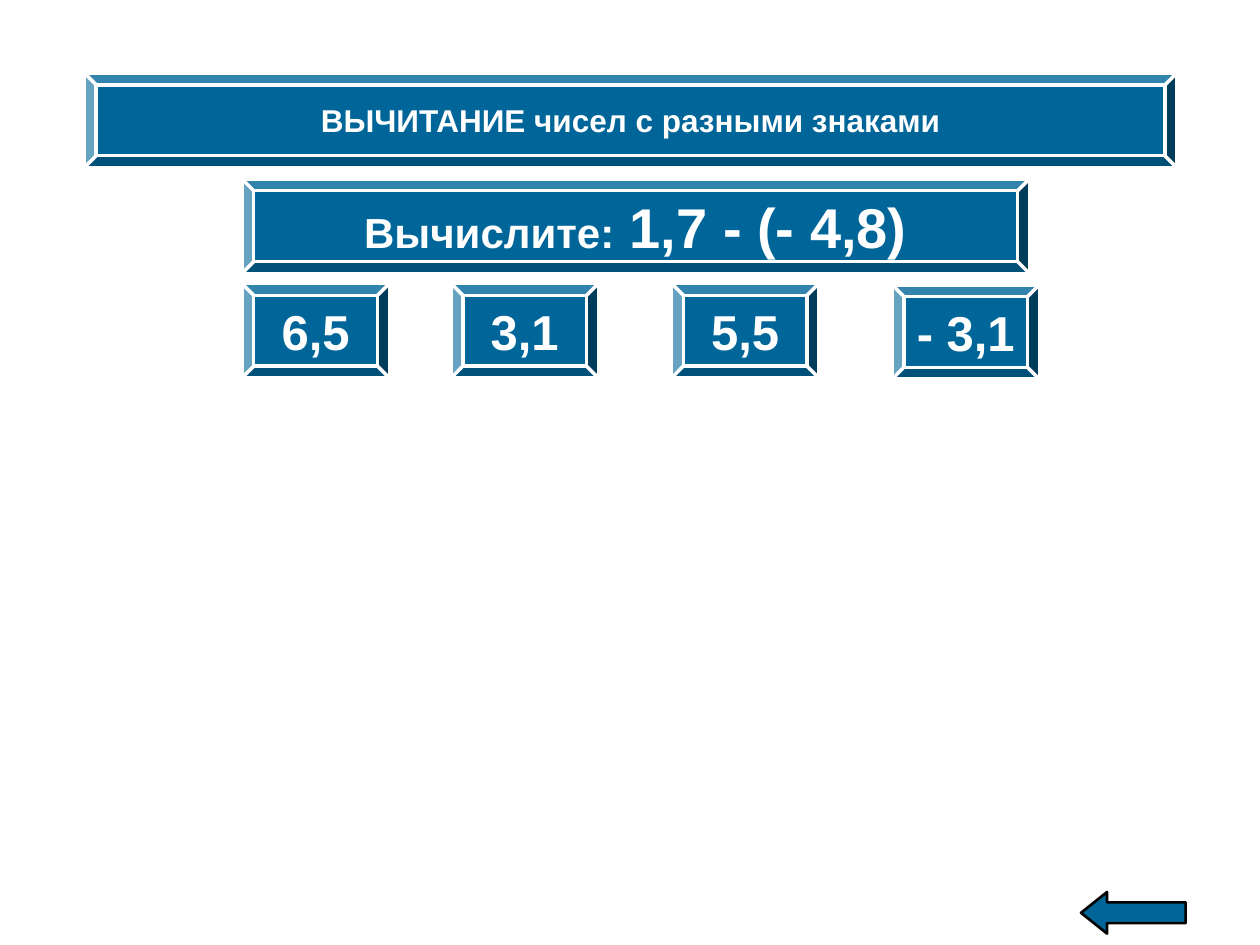
from dataclasses import dataclass

from pptx import Presentation
from pptx.dml.color import RGBColor
from pptx.enum.shapes import MSO_SHAPE as Shape
from pptx.enum.text import MSO_ANCHOR as Anchor, PP_ALIGN as Align
from pptx.util import Inches, Pt


@dataclass(frozen=True)
class Theme:
    fill: RGBColor = RGBColor(0x00, 0x66, 0x99)
    light: RGBColor = RGBColor(0xFF, 0xFF, 0xFF)
    outline: RGBColor = RGBColor(0x00, 0x00, 0x00)
    font: str = "Arial"
    title: int = 18
    prompt: int = 24
    answer: int = 28
    expression: int = 32
    bevel_line: float = 2
    arrow_line: float = 1.5


THEME = Theme()


def add_block(slide, kind, box, line_color, line_width):
    block = slide.shapes.add_shape(kind, *map(Inches, box))
    block.shadow.inherit = False
    block.fill.solid()
    block.fill.fore_color.rgb = THEME.fill
    block.line.color.rgb = line_color
    block.line.width = Pt(line_width)
    return block


def add_plate(slide, box, *parts):
    plate = add_block(slide, Shape.BEVEL, box, THEME.light, THEME.bevel_line)
    plate.adjustments[0] = 0.125
    frame = plate.text_frame
    frame.word_wrap = False
    frame.vertical_anchor = Anchor.MIDDLE
    paragraph = frame.paragraphs[0]
    paragraph.alignment = Align.CENTER
    for wording, size in parts:
        run = paragraph.add_run()
        run.text = wording
        run.font.name = THEME.font
        run.font.size = Pt(size)
        run.font.bold = True
        run.font.color.rgb = THEME.light


def add_answers(slide, box, answers):
    left, top, width, height = box
    for answer, offset, drop in answers:
        add_plate(slide, (left + offset, top + drop, width, height),
                  (answer, THEME.answer))


def add_back_arrow(slide, box):
    arrow = add_block(slide, Shape.LEFT_ARROW, box, THEME.outline, THEME.arrow_line)
    arrow.adjustments[0] = 0.5
    arrow.adjustments[1] = 0.625


def main():
    deck = Presentation()
    deck.slide_width, deck.slide_height = Inches(10), Inches(7.5)
    slide = deck.slides.add_slide(deck.slide_layouts[6])

    add_back_arrow(slide, (8.58, 7.08, 0.83, 0.33))
    add_plate(slide, (0.67, 0.58, 8.67, 0.75),
              ("ВЫЧИТАНИЕ чисел с разными знаками", THEME.title))
    add_plate(slide, (1.92, 1.42, 6.25, 0.75),
              ("Вычислите:", THEME.prompt),
              (" 1,7 - (- 4,8)", THEME.expression))
    add_answers(slide, (1.92, 2.25, 1.17, 0.75),
                [("6,5", 0, 0), ("3,1", 1.66, 0),
                 ("5,5", 3.41, 0), ("- 3,1", 5.16, 0.01)])

    deck.save("out.pptx")


if __name__ == "__main__":
    main()
